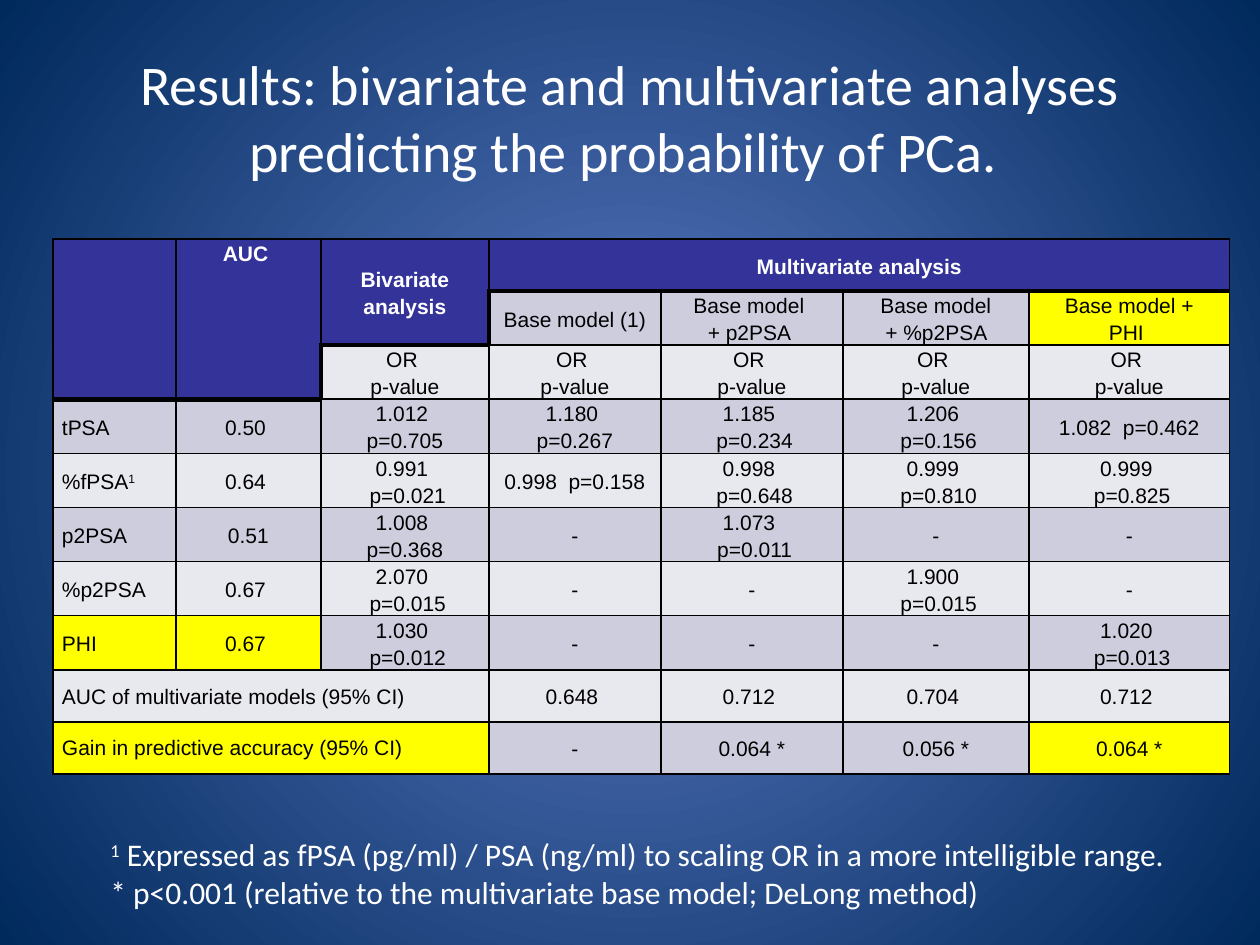
from itertools import product
from lxml import etree
from pptx import Presentation
from pptx.dml.color import RGBColor as Rgb
from pptx.enum.text import MSO_ANCHOR as Anchor, MSO_AUTO_SIZE as AutoSize, PP_ALIGN as Align
from pptx.oxml.ns import qn
from pptx.util import Pt

EMU_PER_PX = 914400 // 126
COLORS = {
    "glow": "5E7CC5", "navy": "00295C", "header": "333399", "lilac": "CDCDDE",
    "pale": "E8E8EF", "yellow": "FFFF00", "white": "FFFFFF", "black": "000000",
}
COLUMN_WIDTHS = [123, 145, 168, 172, 182, 186, 201]
ROW_HEIGHT = 52
HEADER_DEPTHS = [3, 3, 2, 1, 1, 1, 1]
MERGES = [(0, 0, 2, 0), (0, 1, 2, 1), (0, 2, 1, 2), (0, 3, 0, 6), (8, 0, 8, 2), (9, 0, 9, 2)]
HIGHLIGHTS = {(1, 6), (7, 0), (7, 1), (9, 0), (9, 6)}
ODDS = "OR \np-value"
ROWS = [
    ["", "AUC ", "Bivariate analysis", "Multivariate analysis", "", "", ""],
    ["", "", "", "Base model (1)", "Base model \n+ p2PSA ", "Base model\n + %p2PSA ", "Base model +\nPHI "],
    ["", "", ODDS, ODDS, ODDS, ODDS, ODDS],
    ["tPSA", "0.50 ", "1.012 \np=0.705", "1.180 \np=0.267", "1.185 \n p=0.234", "1.206 \n p=0.156", "1.082  p=0.462"],
    ["%fPSA^1", "0.64 ", "0.991 \n p=0.021", "0.998  p=0.158", "0.998 \n p=0.648", "0.999 \n p=0.810", "0.999 \n p=0.825"],
    ["p2PSA", "0.51", "1.008 \np=0.368", "-", "1.073 \n p=0.011", "-", "-"],
    ["%p2PSA", "0.67 ", "2.070 \n p=0.015", "-", "-", "1.900 \n p=0.015", "-"],
    ["PHI", "0.67 ", "1.030 \n p=0.012", "-", "-", "-", "1.020 \n p=0.013"],
    ["AUC of multivariate models (95% CI)", "", "", "0.648 ", "0.712 ", "0.704 ", "0.712 "],
    ["Gain in predictive accuracy (95% CI)", "", "", "-", "0.064 *", "0.056 *", "0.064 *"],
]
TITLE = "Results: bivariate and multivariate analyses predicting the probability of PCa. "
FOOTNOTES = (
    "^1^ Expressed as fPSA (pg/ml) / PSA (ng/ml) to scaling OR in a more intelligible range.\n"
    "* p<0.001 (relative to the multivariate base model; DeLong method)"
)


def px(*lengths):
    return [length * EMU_PER_PX for length in lengths]


def rgb(name):
    return Rgb.from_string(COLORS[name])


def apply(target, formats):
    for name, value in formats.items():
        setattr(target, name, value)


def write_text(frame, text, color, font, para_format):
    for index, line in enumerate(text.split("\n")):
        para = frame.add_paragraph() if index else frame.paragraphs[0]
        apply(para, para_format)
        for order, piece in enumerate(line.split("^")):
            if not piece:
                continue
            span = para.add_run()
            span.text = piece
            apply(span.font, font)
            span.font.color.rgb = rgb(color)
            if order % 2:
                span.font._element.set("baseline", "30000")


def paint_background(page):
    fill = page.background.fill
    fill.gradient()
    for stop, position, name in zip(fill.gradient_stops, (0, 1), ("glow", "navy")):
        stop.position = position
        stop.color.rgb = rgb(name)
    gradient = page.background._cSld.find(".//" + qn("a:gradFill"))
    gradient.remove(gradient.find(qn("a:lin")))
    circle = etree.SubElement(gradient, qn("a:path"), path="circle")
    etree.SubElement(circle, qn("a:fillToRect"), dict.fromkeys("ltrb", "50000"))


def add_title(page):
    title = page.shapes.title
    apply(title, dict(zip(("left", "top", "width", "height"), px(63, 38, 1134, 157))))
    title.text_frame.vertical_anchor = Anchor.MIDDLE
    write_text(title.text_frame, TITLE, "white", {"name": "Calibri", "size": Pt(32)}, {"alignment": Align.CENTER})


def draw_borders(cell, widths):
    properties = cell._tc.get_or_add_tcPr()
    for side, points in widths.items():
        line = etree.SubElement(properties, qn(f"a:ln{side}"), w=str(Pt(points)))
        solid = etree.SubElement(line, qn("a:solidFill"))
        etree.SubElement(solid, qn("a:srgbClr"), val=COLORS["black"])


def style_cell(cell, row, column):
    depth = HEADER_DEPTHS[column]
    is_header = row < depth
    beside_header = column > 0 and depth <= row < HEADER_DEPTHS[column - 1]
    draw_borders(cell, {
        "L": 3 if beside_header else 1,
        "R": 1,
        "T": 3 if row == depth else 1,
        "B": 3 if is_header else 1,
    })
    band = "lilac" if row % 2 else "pale"
    name = "header" if is_header else "yellow" if (row, column) in HIGHLIGHTS else band
    cell.fill.solid()
    cell.fill.fore_color.rgb = rgb(name)
    side, flat = px(9, 0)
    apply(cell, {
        "margin_left": side, "margin_right": side, "margin_top": flat, "margin_bottom": flat,
        "vertical_anchor": Anchor.TOP if (row, column) == (0, 1) else Anchor.MIDDLE,
    })
    write_text(
        cell.text_frame, ROWS[row][column], "white" if is_header else "black",
        {"name": "Arial", "size": Pt(12), "bold": is_header},
        {"alignment": Align.CENTER if column else Align.LEFT,
         "line_spacing": 1.0 if (row, column) == (9, 0) else 1.15},
    )


def add_results_table(page):
    size = px(53, 239, sum(COLUMN_WIDTHS), ROW_HEIGHT * len(ROWS))
    table = page.shapes.add_table(len(ROWS), len(COLUMN_WIDTHS), *size).table
    apply(table, {"first_row": False, "horz_banding": False})
    for column, width in zip(table.columns, px(*COLUMN_WIDTHS)):
        column.width = width
    for top, left, bottom, right in MERGES:
        table.cell(top, left).merge(table.cell(bottom, right))
    for row, column in product(range(len(ROWS)), range(len(COLUMN_WIDTHS))):
        style_cell(table.cell(row, column), row, column)


def add_footnotes(page):
    box = page.shapes.add_textbox(*px(98, 829, 1091, 127))
    apply(box.text_frame, {"word_wrap": False, "auto_size": AutoSize.SHAPE_TO_FIT_TEXT})
    write_text(box.text_frame, FOOTNOTES, "white", {"name": "Calibri", "size": Pt(18)}, {"alignment": Align.LEFT})


def main():
    deck = Presentation()
    deck.slide_width, deck.slide_height = px(1260, 945)
    page = deck.slides.add_slide(deck.slide_layouts[5])
    paint_background(page)
    add_title(page)
    add_results_table(page)
    add_footnotes(page)
    deck.save("out.pptx")


if __name__ == "__main__":
    main()
